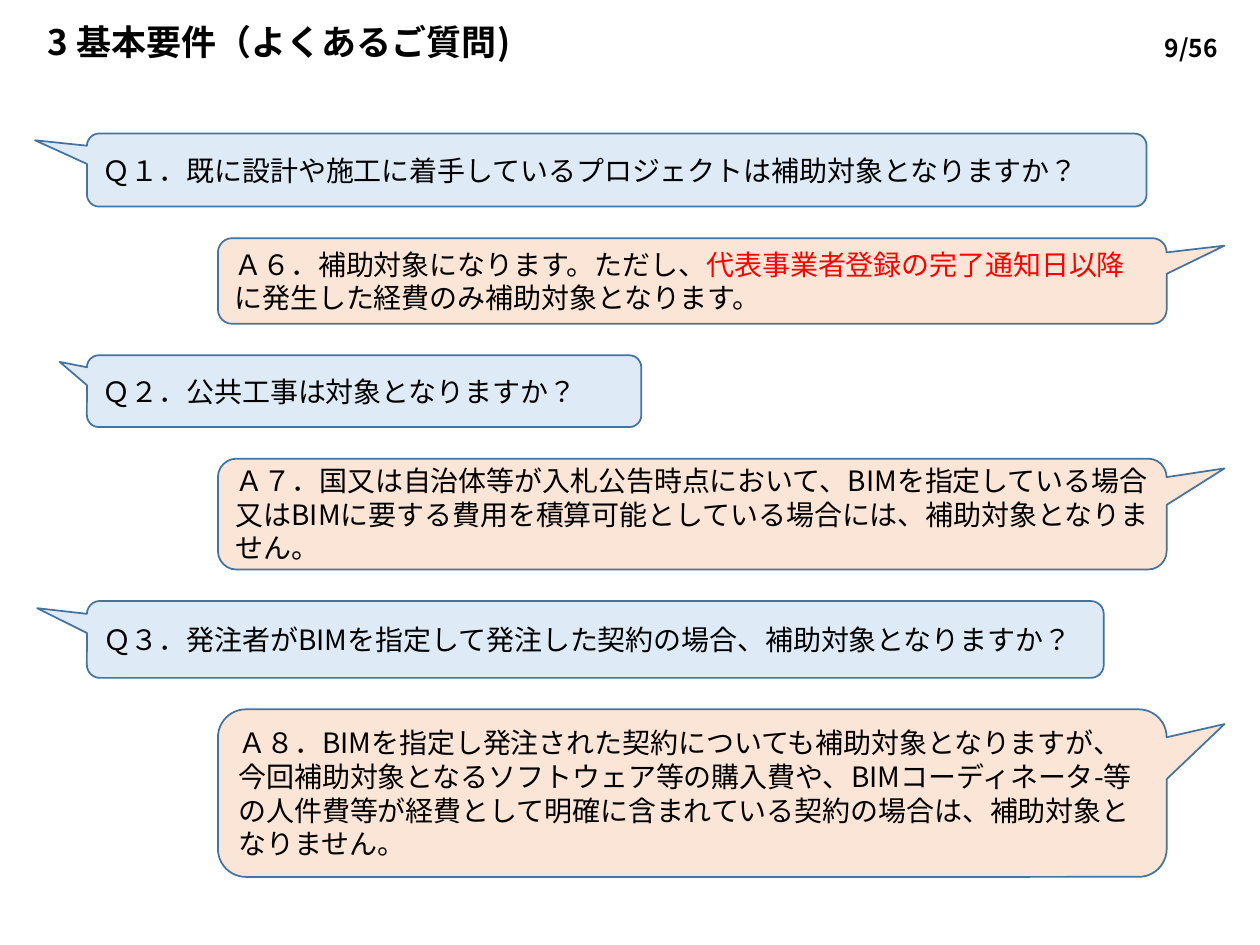
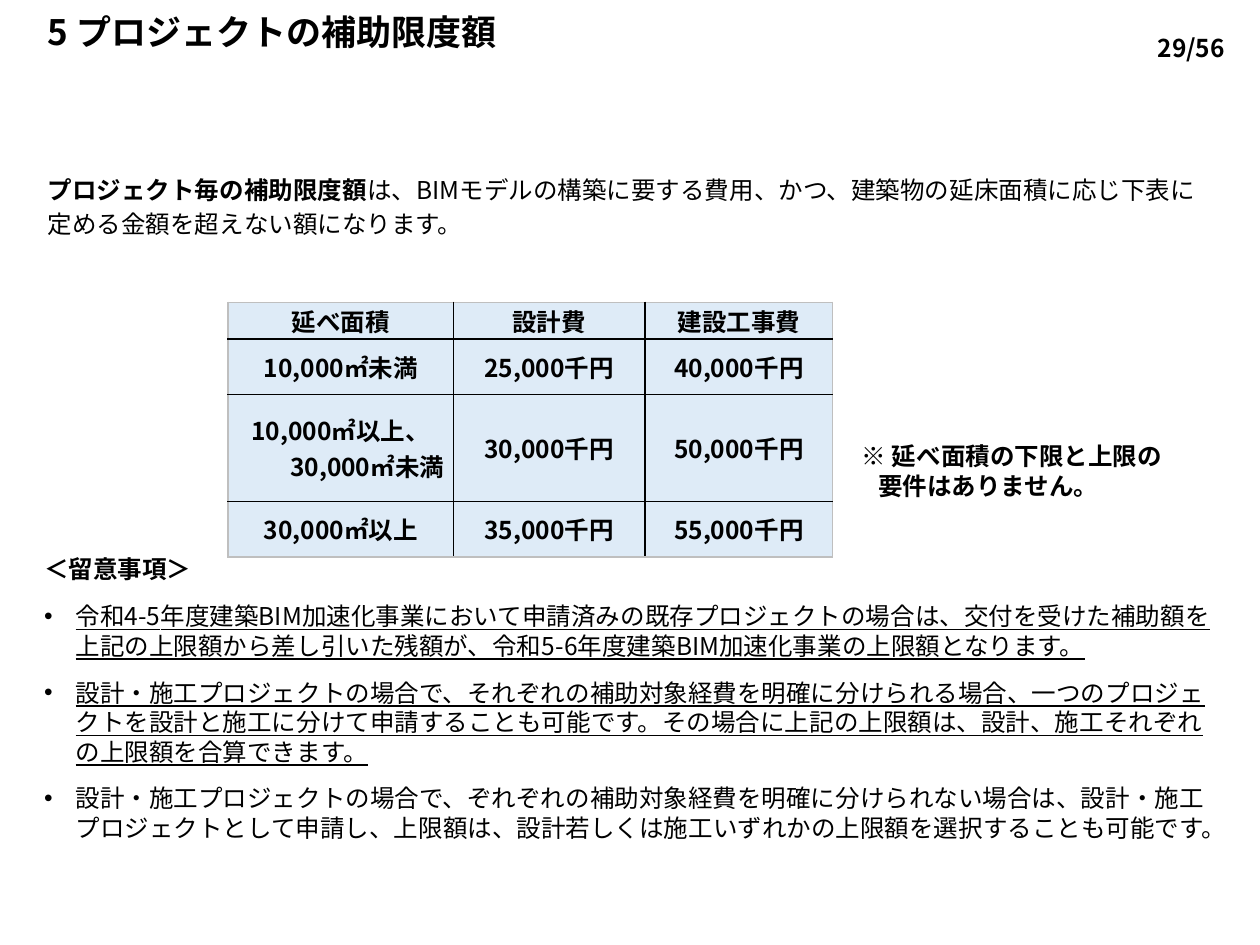
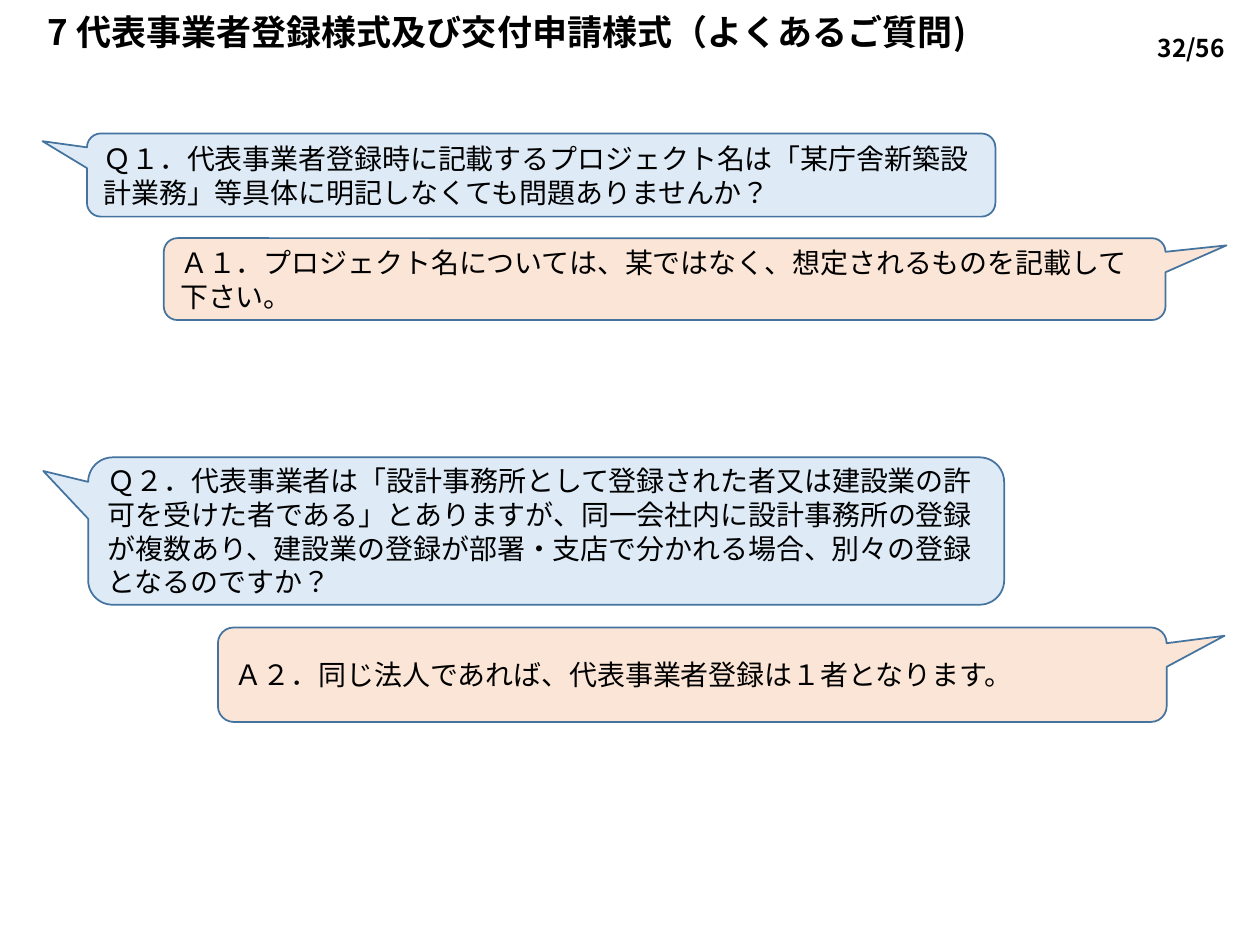
from lxml.etree import SubElement
from pptx import Presentation
from pptx.dml.color import RGBColor
from pptx.enum.lang import MSO_LANGUAGE_ID
from pptx.enum.shapes import MSO_SHAPE
from pptx.enum.text import MSO_ANCHOR, PP_ALIGN
from pptx.oxml.ns import qn
from pptx.util import Inches, Pt

BLACK = RGBColor(0x00, 0x00, 0x00)
RED = RGBColor(0xFF, 0x00, 0x00)
PALE_BLUE = RGBColor(0xDE, 0xEB, 0xF7)
PALE_ORANGE = RGBColor(0xFB, 0xE5, 0xD6)
OUTLINE_BLUE = RGBColor(0x43, 0x73, 0x9E)
INNER_BORDER = "000000"
OUTER_BORDER = "BFBFBF"

FONT_NAME = "Noto Sans CJK JP"
LEFT_EDGE = 0.28
PAGE_COUNT = 56
TITLE = {"size": Pt(20), "bold": True}
STRONG = {"size": Pt(14), "bold": True}
BODY = {"size": Pt(14), "bold": False}
UNDERLINED = {**BODY, "underline": True}
CALLOUT = {"size": Pt(16)}

QUESTION = {"fill": PALE_BLUE, "adjustments": (-0.549, -0.407, 0.167)}
ANSWER = {"fill": PALE_ORANGE, "adjustments": (0.561, -0.412, 0.167)}

BASIC_CALLOUTS = [
    (QUESTION, (0.69, 1.06, 8.41, 0.58),
     [("Ｑ１．既に設計や施工に着手しているプロジェクトは補助対象となりますか？", BLACK)]),
    (ANSWER, (1.73, 1.89, 7.53, 0.68),
     [("Ａ６．補助対象になります。ただし、", BLACK),
      ("代表事業者登録の完了通知日以降", RED),
      ("に発生した経費のみ補助対象となります。", BLACK)]),
    (QUESTION, (0.69, 2.82, 4.4, 0.57),
     [("Ｑ２．公共工事は対象となりますか？", BLACK)]),
    (ANSWER, (1.73, 3.64, 7.53, 0.88),
     [("Ａ７．国又は自治体等が入札公告時点において、BIMを指定している場合又はBIMに要する費用を"
       "積算可能としている場合には、補助対象となりません。", BLACK)]),
    (QUESTION, (0.69, 4.77, 8.07, 0.61),
     [("Ｑ３．発注者がBIMを指定して発注した契約の場合、補助対象となりますか？", BLACK)]),
    (ANSWER, (1.73, 5.63, 7.53, 1.33),
     [("Ａ８．BIMを指定し発注された契約についても補助対象となりますが、今回補助対象となる"
       "ソフトウェア等の購入費や、BIMコーディネータ-等の人件費等が経費として明確に含まれている"
       "契約の場合は、補助対象となりません。", BLACK)]),
]
FORM_CALLOUTS = [
    (QUESTION, (0.69, 1.06, 7.21, 0.66),
     [("Ｑ１．代表事業者登録時に記載するプロジェクト名は「某庁舎新築設計業務」等具体に"
       "明記しなくても問題ありませんか？", BLACK)]),
    (ANSWER, (1.3, 1.89, 7.95, 0.65),
     [("Ａ１．プロジェクト名については、某ではなく、想定されるものを記載して下さい。", BLACK)]),
    (QUESTION, (0.7, 3.63, 7.27, 1.17),
     [("Ｑ２．代表事業者は「設計事務所として登録された者又は建設業の許可を受けた者である」"
       "とありますが、同一会社内に設計事務所の登録が複数あり、建設業の登録が部署・支店で"
       "分かれる場合、別々の登録となるのですか？", BLACK)]),
    (ANSWER, (1.73, 4.98, 7.53, 0.75),
     [("Ａ２．同じ法人であれば、代表事業者登録は１者となります。", BLACK)]),
]
LIMIT_COLUMNS = (1.79, 1.52, 1.49)
LIMIT_ROWS = [
    (0.29, ("延べ面積", "設計費", "建設工事費")),
    (0.44, ("10,000㎡未満", "25,000千円", "40,000千円")),
    (0.85, ("10,000㎡以上、\n30,000㎡未満", "30,000千円", "50,000千円")),
    (0.44, ("30,000㎡以上", "35,000千円", "55,000千円")),
]
NOTES = [
    ("令和4-5年度建築BIM加速化事業において申請済みの既存プロジェクトの場合は、交付を受けた補助額を"
     "上記の上限額から差し引いた残額が、令和5-6年度建築BIM加速化事業の上限額となります。", UNDERLINED),
    ("設計・施工プロジェクトの場合で、それぞれの補助対象経費を明確に分けられる場合、一つのプロジェクトを"
     "設計と施工に分けて申請することも可能です。その場合に上記の上限額は、設計、施工それぞれの上限額を"
     "合算できます。", UNDERLINED),
    ("設計・施工プロジェクトの場合で、ぞれぞれの補助対象経費を明確に分けられない場合は、設計・施工"
     "プロジェクトとして申請し、上限額は、設計若しくは施工いずれかの上限額を選択することも可能です。", BODY),
]


def apply_format(target, values):
    """Set each named attribute on the target."""
    for name, value in values.items():
        setattr(target, name, value)


def add_run(paragraph, text, font_format, color=BLACK):
    """Append a run in the shared Japanese font."""
    run = paragraph.add_run()
    run.text = text
    apply_format(run.font, {"name": FONT_NAME,
                            "language_id": MSO_LANGUAGE_ID.JAPANESE, **font_format})
    run.font.color.rgb = color
    latin = run.font._element.find(qn("a:latin"))
    east_asian = latin.makeelement(qn("a:ea"), {"typeface": FONT_NAME})
    latin.addnext(east_asian)


def set_indent(paragraph, left, first_line=0):
    """Set the left margin and first-line indent in inches."""
    properties = paragraph._p.get_or_add_pPr()
    properties.set("marL", str(Inches(left)))
    properties.set("indent", str(Inches(first_line)))


def add_bullet(paragraph):
    """Give the paragraph a hanging round bullet."""
    set_indent(paragraph, 0.25, -0.25)
    properties = paragraph._p.get_or_add_pPr()
    SubElement(properties, qn("a:buFont"), typeface="Arial")
    SubElement(properties, qn("a:buChar"), char="•")


def add_text_box(slide, box, anchor=MSO_ANCHOR.TOP, insets=(0.1, 0.05)):
    """Add a wrapping text box and return its text frame."""
    frame = slide.shapes.add_textbox(*map(Inches, box)).text_frame
    side, end = map(Inches, insets)
    apply_format(frame, {"word_wrap": True, "vertical_anchor": anchor,
                         "margin_left": side, "margin_right": side,
                         "margin_top": end, "margin_bottom": end})
    return frame


def add_heading(slide, title, page, top=0.0, spacing=0.9):
    """Add the slide title and the page number."""
    frame = add_text_box(slide, (LEFT_EDGE, top, 8.12, 0.54), MSO_ANCHOR.MIDDLE)
    paragraph = frame.paragraphs[0]
    paragraph.line_spacing = spacing
    add_run(paragraph, title, TITLE)
    paragraph = add_text_box(slide, (8.91, 0, 1.09, 0.43), MSO_ANCHOR.MIDDLE).paragraphs[0]
    apply_format(paragraph, {"alignment": PP_ALIGN.CENTER, "line_spacing": Pt(40)})
    add_run(paragraph, f"{page}/{PAGE_COUNT}", STRONG)


def add_callout(slide, style, box, runs):
    """Add a question or answer speech bubble."""
    shape = slide.shapes.add_shape(MSO_SHAPE.ROUNDED_RECTANGULAR_CALLOUT, *map(Inches, box))
    shape.shadow.inherit = False
    for index, value in enumerate(style["adjustments"]):
        shape.adjustments[index] = value
    shape.fill.solid()
    shape.fill.fore_color.rgb = style["fill"]
    shape.line.color.rgb = OUTLINE_BLUE
    shape.line.width = Pt(1)
    apply_format(shape.text_frame, {"word_wrap": True, "vertical_anchor": MSO_ANCHOR.MIDDLE})
    paragraph = shape.text_frame.paragraphs[0]
    paragraph.alignment = PP_ALIGN.LEFT
    for text, color in runs:
        add_run(paragraph, text, CALLOUT, color)


def set_borders(cell, outer_sides):
    """Draw grey borders on the outer sides and black ones elsewhere."""
    properties = cell._tc.get_or_add_tcPr()
    for side, is_outer in outer_sides.items():
        line = SubElement(properties, qn(f"a:ln{side}"), w=str(Pt(1)))
        fill = SubElement(line, qn("a:solidFill"))
        SubElement(fill, qn("a:srgbClr"), val=OUTER_BORDER if is_outer else INNER_BORDER)


def fill_cell(cell, text):
    """Write centred bold text, indenting any second line."""
    cell.fill.solid()
    cell.fill.fore_color.rgb = PALE_BLUE
    apply_format(cell, {"vertical_anchor": MSO_ANCHOR.MIDDLE,
                        "margin_left": Inches(0.06), "margin_right": Inches(0.06),
                        "margin_top": 0, "margin_bottom": 0})
    for index, line in enumerate(text.split("\n")):
        paragraph = cell.text_frame.add_paragraph() if index else cell.text_frame.paragraphs[0]
        if index:
            set_indent(paragraph, 0, 0.42)
        paragraph.alignment = PP_ALIGN.CENTER
        add_run(paragraph, line, STRONG)


def add_limit_table(slide):
    """Add the table of subsidy limits by floor area."""
    last_row, last_column = len(LIMIT_ROWS) - 1, len(LIMIT_COLUMNS) - 1
    table = slide.shapes.add_table(
        len(LIMIT_ROWS), len(LIMIT_COLUMNS), Inches(1.81), Inches(2.4),
        Inches(sum(LIMIT_COLUMNS)), Inches(sum(height for height, _ in LIMIT_ROWS))).table
    apply_format(table, {"first_row": False, "horz_banding": False})
    for column, width in zip(table.columns, LIMIT_COLUMNS):
        column.width = Inches(width)
    for row_index, (height, texts) in enumerate(LIMIT_ROWS):
        table.rows[row_index].height = Inches(height)
        for column_index, text in enumerate(texts):
            cell = table.cell(row_index, column_index)
            set_borders(cell, {"L": column_index == 0, "R": column_index == last_column,
                               "T": row_index == 0, "B": row_index == last_row})
            fill_cell(cell, text)


def add_limit_summary(slide):
    """Add the sentence that introduces the limits."""
    paragraph = add_text_box(slide, (LEFT_EDGE, 1.3, 9.45, 5.45)).paragraphs[0]
    paragraph.line_spacing = Pt(19.5)
    add_run(paragraph, "プロジェクト毎の補助限度額", STRONG)
    add_run(paragraph, "は、BIMモデルの構築に要する費用、かつ、建築物の延床面積に応じ"
                       "下表に定める金額を超えない額になります。", BODY)


def add_notes_list(slide):
    """Add the heading and bullets of points to note."""
    frame = add_text_box(slide, (LEFT_EDGE, 4.36, 9.45, 2.51), insets=(0.07, 0.04))
    add_run(frame.paragraphs[0], "＜留意事項＞", STRONG)
    for text, font_format in NOTES:
        paragraph = frame.add_paragraph()
        paragraph.space_before = Pt(10)
        add_bullet(paragraph)
        add_run(paragraph, text, font_format)


def add_area_remark(slide):
    """Add the remark beside the table."""
    frame = add_text_box(slide, (6.77, 3.42, 2.96, 0.61), insets=(0.07, 0.04))
    paragraph = frame.paragraphs[0]
    paragraph.line_spacing = Pt(19.5)
    add_run(paragraph, "※ 延べ面積の下限と上限の", STRONG)
    paragraph = frame.add_paragraph()
    apply_format(paragraph, {"line_spacing": Pt(7.5), "space_before": Pt(10)})
    set_indent(paragraph, 0.13)
    add_run(paragraph, "要件はありません。", STRONG)


def main():
    """Build the three slides and save them."""
    presentation = Presentation()
    apply_format(presentation, {"slide_width": Inches(10), "slide_height": Inches(7.5)})
    blank = presentation.slide_layouts[6]

    slide = presentation.slides.add_slide(blank)
    add_heading(slide, "3 基本要件（よくあるご質問)", 9, top=-0.05, spacing=Pt(40))
    for callout in BASIC_CALLOUTS:
        add_callout(slide, *callout)

    slide = presentation.slides.add_slide(blank)
    add_limit_table(slide)
    add_limit_summary(slide)
    add_notes_list(slide)
    add_area_remark(slide)
    add_heading(slide, "5 プロジェクトの補助限度額", 29)

    slide = presentation.slides.add_slide(blank)
    add_heading(slide, "7 代表事業者登録様式及び交付申請様式（よくあるご質問)", 32)
    for callout in FORM_CALLOUTS:
        add_callout(slide, *callout)

    presentation.save("out.pptx")


if __name__ == "__main__":
    main()
